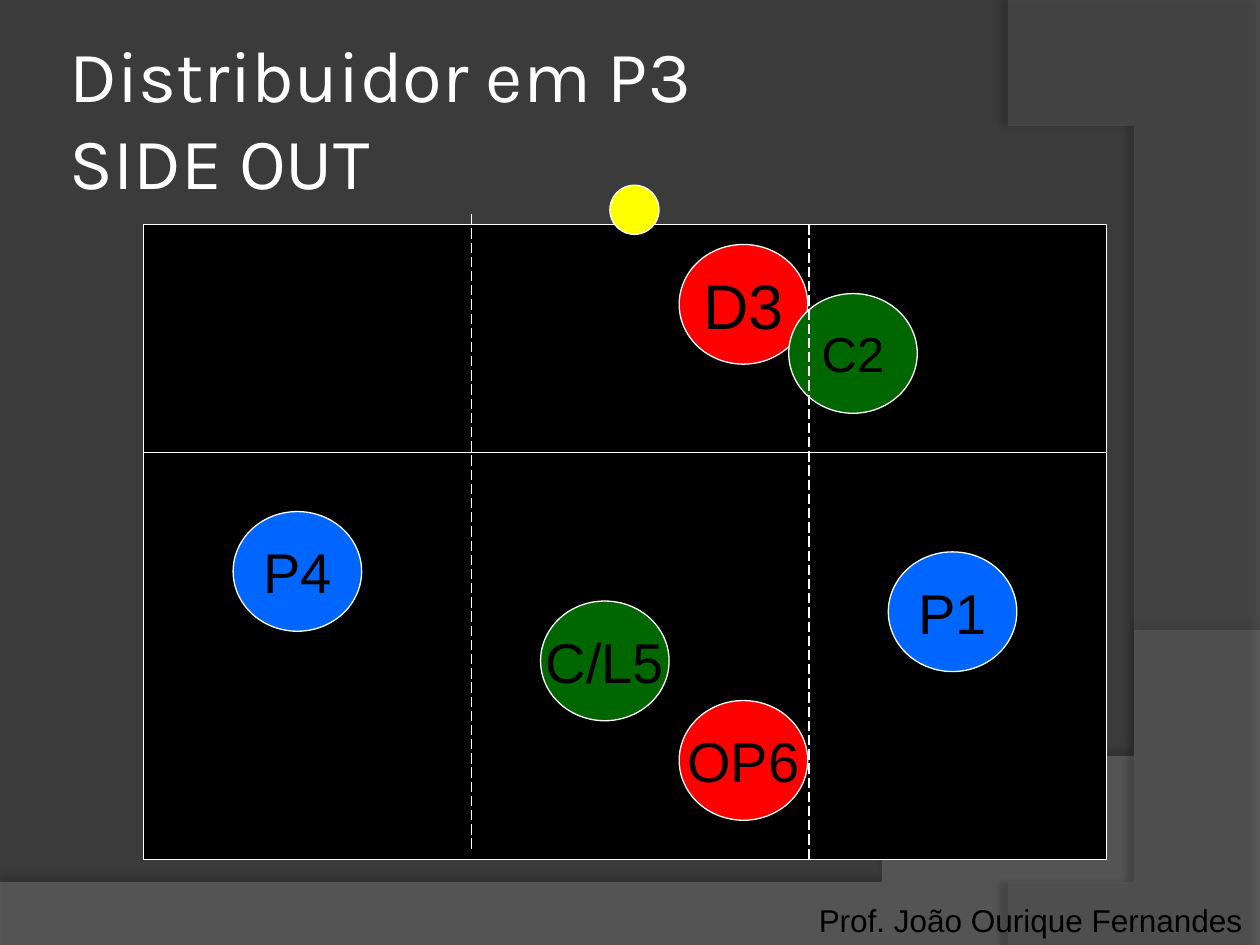
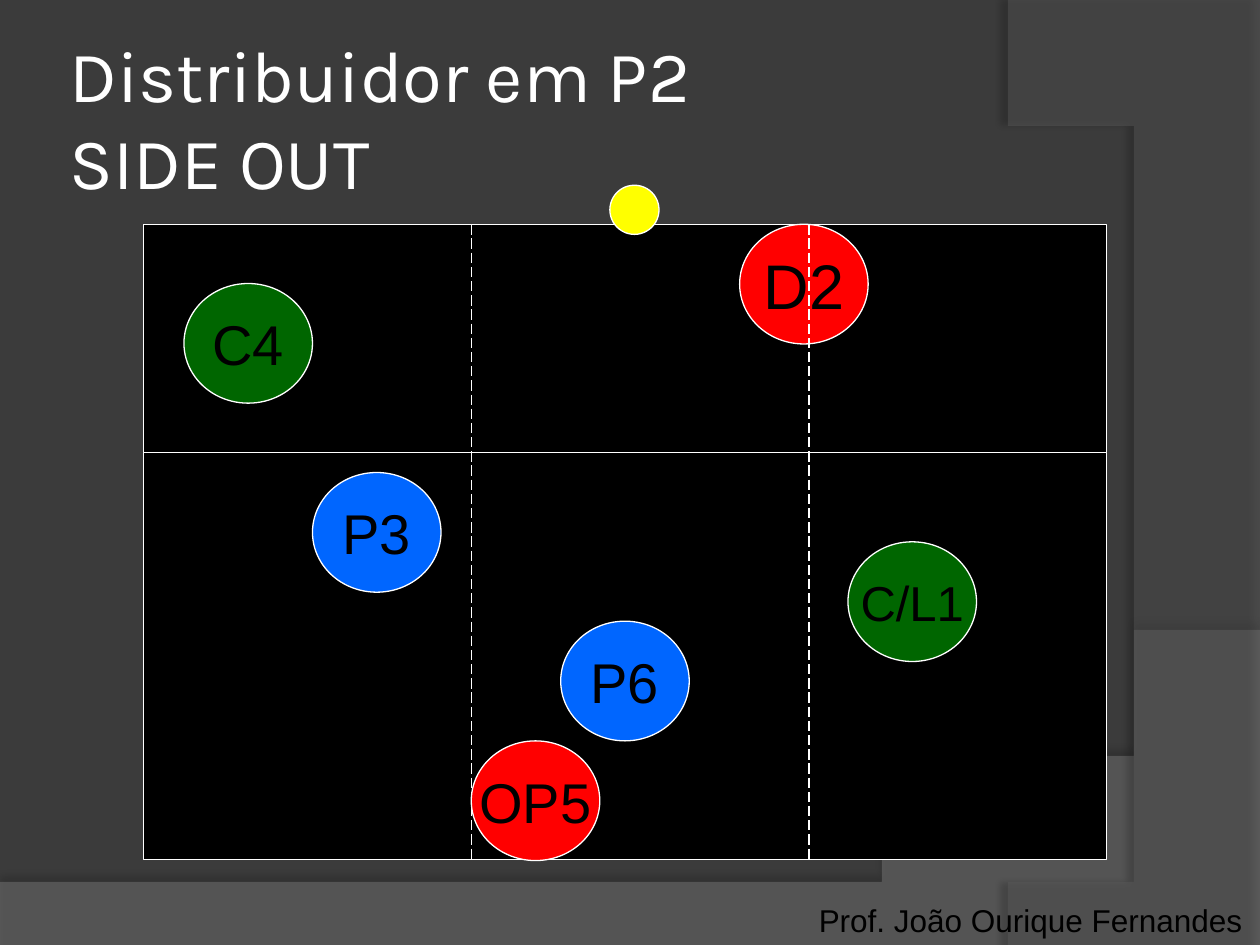
from dataclasses import dataclass

from lxml import etree
from pptx import Presentation
from pptx.dml.color import RGBColor
from pptx.enum.dml import MSO_LINE
from pptx.enum.shapes import MSO_CONNECTOR, MSO_SHAPE
from pptx.enum.text import MSO_ANCHOR, PP_ALIGN
from pptx.oxml.ns import qn
from pptx.util import Inches, Pt

RECT, OVAL = MSO_SHAPE.RECTANGLE, MSO_SHAPE.OVAL
STRAIGHT = MSO_CONNECTOR.STRAIGHT
DASH = MSO_LINE.LONG_DASH
MIDDLE, CENTER = MSO_ANCHOR.MIDDLE, PP_ALIGN.CENTER

BACK = RGBColor(0x3B, 0x3B, 0x3B)
WHITE = RGBColor(0xFF, 0xFF, 0xFF)
BLACK = RGBColor(0x00, 0x00, 0x00)
RED = RGBColor(0xFF, 0x00, 0x00)
GREEN = RGBColor(0x00, 0x66, 0x00)
BLUE = RGBColor(0x00, 0x66, 0xFF)
YELLOW = RGBColor(0xFF, 0xFF, 0x00)
LIGHT = RGBColor(0x7F, 0x7F, 0x7F)
GREY = RGBColor(0x5E, 0x5E, 0x5E)

# Court and player sizes, in inches
LEFT, TOP, WIDTH, HEIGHT = 1.14, 1.78, 7.64, 5.04
ATTACK = 3.59
LANES = (3.74, 6.42)
OVAL_W, OVAL_H = 1.02, 0.95

Point = tuple[float, float]


@dataclass
class Band:
    corners: list[Point]
    curve: tuple[Point, Point, Point, Point]
    color: RGBColor
    alpha: int
    shade: int
    dist: float
    angle: int


@dataclass
class Player:
    name: str
    x: float
    y: float
    color: RGBColor
    size: int = 32


@dataclass
class Scheme:
    title: str
    players: list[Player]
    lift: float = 0  # how far the left lane line is raised


BANDS = [
    Band([(0, 7.51), (10, 7.51)],
         ((10, 5.2), (5.59, 7.29), (3.91, 7.19), (0, 7.05)),
         LIGHT, 45, 35, 3.5, 270),
    Band([(10, 0.02), (10, 7.5)],
         ((8.21, 7.5), (9.35, 6.19), (10.18, 3), (8, 0)),
         GREY, 40, 45, 4, 180),
]

SCHEMES = [
    Scheme("Distribuidor em P3\nSIDE OUT", [
        Player("D3", 5.39, 1.94, RED, 36),
        Player("OP6", 5.39, 5.56, RED),
        Player("C/L5", 4.29, 4.77, GREEN),
        Player("C2", 6.26, 2.33, GREEN, 28),
        Player("P4", 1.85, 4.06, BLUE),
        Player("P1", 7.05, 4.38, BLUE),
    ], lift=0.08),
    Scheme("Distribuidor em P2\nSIDE OUT", [
        Player("D2", 5.87, 1.78, RED, 36),
        Player("OP5", 3.74, 5.88, RED),
        Player("C4", 1.46, 2.25, GREEN),
        Player("C/L1", 6.73, 4.3, GREEN, 28),
        Player("P3", 2.48, 3.75, BLUE),
        Player("P6", 4.45, 4.93, BLUE),
    ]),
]


def bezier(curve: tuple[Point, ...], steps: int = 60) -> list[Point]:
    a, b, c, d = curve
    points = []
    for i in range(steps + 1):
        t = i / steps
        u = 1 - t
        points.append(tuple(
            u**3 * a[k] + 3 * u * u * t * b[k] + 3 * u * t * t * c[k] + t**3 * d[k]
            for k in (0, 1)))
    return points


def add_alpha(color, percent: int) -> None:
    etree.SubElement(color, qn("a:alpha"), val=str(percent * 1000))


def add_band(slide, band: Band) -> None:
    points = band.corners + bezier(band.curve)
    pen = slide.shapes.build_freeform(*points[0], scale=Inches(1))
    pen.add_line_segments(points[1:], close=True)
    shape = pen.convert_to_shape()
    shape.fill.solid()
    shape.fill.fore_color.rgb = band.color
    shape.line.fill.background()
    shape.shadow.inherit = False
    props = shape.element.spPr
    add_alpha(props.find(".//" + qn("a:srgbClr")), band.alpha)
    shadow = etree.SubElement(
        props.find(qn("a:effectLst")), qn("a:outerShdw"), blurRad=str(Pt(4)),
        dist=str(Pt(band.dist)), dir=str(band.angle * 60000),
        algn="ctr", rotWithShape="0")
    add_alpha(etree.SubElement(shadow, qn("a:srgbClr"), val=str(BLACK)), band.shade)


def add_form(slide, kind, x: float, y: float, w: float, h: float, color: RGBColor):
    shape = slide.shapes.add_shape(kind, Inches(x), Inches(y), Inches(w), Inches(h))
    shape.shadow.inherit = False
    shape.fill.solid()
    shape.fill.fore_color.rgb = color
    shape.line.color.rgb = WHITE
    shape.line.width = Pt(0.75)
    return shape


def add_line(slide, x1: float, y1: float, x2: float, y2: float, dash=None) -> None:
    line = slide.shapes.add_connector(
        STRAIGHT, Inches(x1), Inches(y1), Inches(x2), Inches(y2))
    line.line.color.rgb = WHITE
    line.line.width = Pt(0.75)
    if dash:
        line.line.dash_style = dash
    etree.SubElement(line.element.spPr, qn("a:effectLst"))


def write(frame, text: str, font: str, size: float, color: RGBColor, wrap=False):
    frame.word_wrap = wrap
    para = frame.paragraphs[0]
    para.text = text
    for run in para.runs:
        run.font.name = font
        run.font.size = Pt(size)
        run.font.color.rgb = color
    return para


def add_player(slide, player: Player) -> None:
    shape = add_form(slide, OVAL, player.x, player.y, OVAL_W, OVAL_H, player.color)
    frame = shape.text_frame
    frame.vertical_anchor = MIDDLE
    write(frame, player.name, "Arial", player.size, BLACK).alignment = CENTER


def add_title(slide, text: str) -> None:
    box = slide.shapes.add_textbox(Inches(0.5), Inches(0.3), Inches(8.17), Inches(1.25))
    frame = box.text_frame
    frame.margin_left = frame.margin_right = Inches(0.05)
    frame.vertical_anchor = MIDDLE
    write(frame, text, "Karla", 41.4, WHITE, wrap=True)


def add_footer(slide) -> None:
    box = slide.shapes.add_textbox(Inches(6.4), Inches(7.1), Inches(3.6), Inches(0.4))
    write(box.text_frame, "Prof. João Ourique Fernandes", "Arial", 18, BLACK)


def add_scheme(deck, scheme: Scheme) -> None:
    slide = deck.slides.add_slide(deck.slide_layouts[6])
    slide.background.fill.solid()
    slide.background.fill.fore_color.rgb = BACK
    for band in BANDS:
        add_band(slide, band)
    add_title(slide, scheme.title)

    # Court with its attack line
    add_form(slide, RECT, LEFT, TOP, WIDTH, HEIGHT, BLACK)
    add_line(slide, LEFT, ATTACK, LEFT + WIDTH, ATTACK)

    for player in scheme.players:
        add_player(slide, player)

    # Lane lines run over the players
    for x, lift in zip(LANES, (scheme.lift, 0)):
        add_line(slide, x, TOP - lift, x, TOP + HEIGHT - lift, DASH)

    # Ball
    add_form(slide, OVAL, 4.84, 1.47, 0.39, 0.39, YELLOW)
    add_footer(slide)


def main() -> None:
    deck = Presentation()
    deck.slide_width, deck.slide_height = Inches(10), Inches(7.5)
    for scheme in SCHEMES:
        add_scheme(deck, scheme)
    deck.save("out.pptx")


if __name__ == "__main__":
    main()
